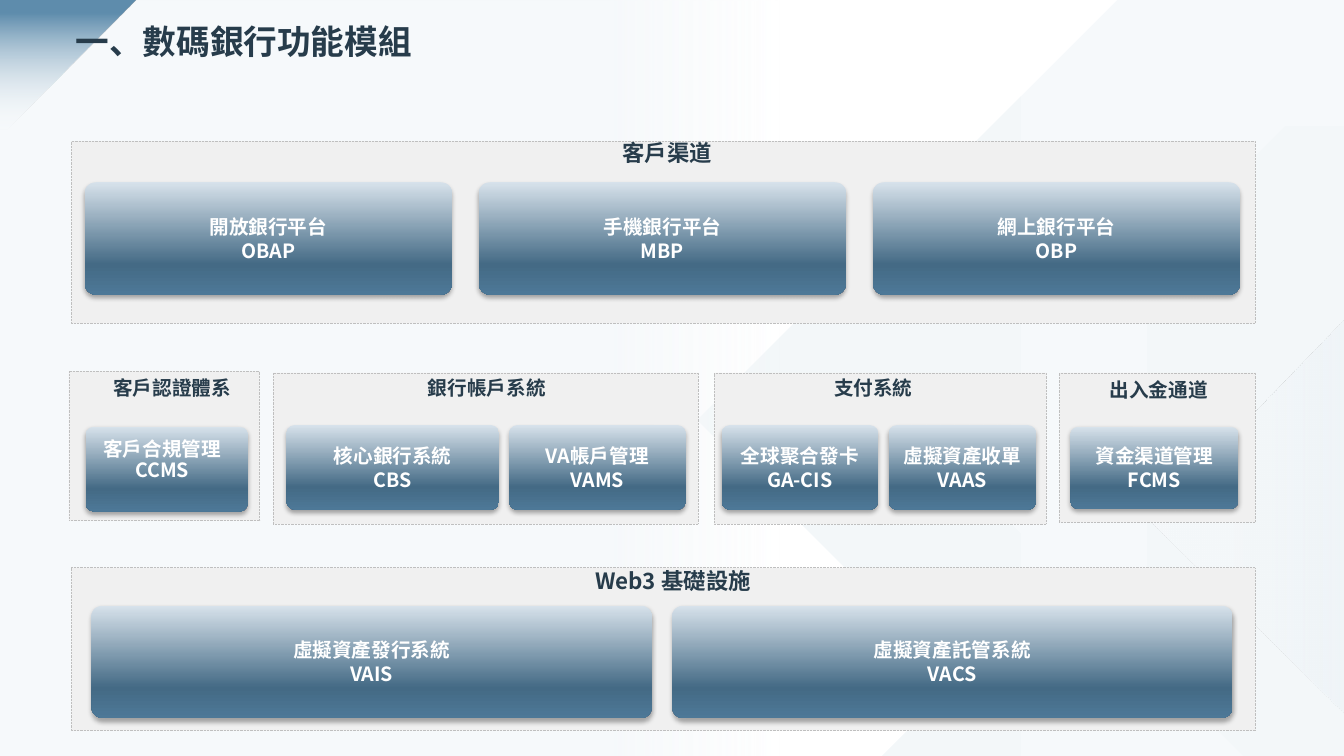
from lxml.etree import SubElement
from pptx import Presentation
from pptx.dml.color import RGBColor
from pptx.enum.dml import MSO_LINE
from pptx.enum.shapes import MSO_SHAPE as Kind
from pptx.enum.text import MSO_ANCHOR as Anchor, MSO_AUTO_SIZE as Fit, PP_ALIGN as Align
from pptx.oxml import parse_xml
from pptx.oxml.ns import nsdecls, qn
from pptx.util import Inches, Pt

FONT = "Noto Sans CJK SC"
WHITE = RGBColor(0xFF, 0xFF, 0xFF)
INK = RGBColor(0x27, 0x3C, 0x4B)
PANEL = RGBColor(0xF0, 0xF0, 0xF0)
EDGE = RGBColor(0xBF, 0xBF, 0xBF)
MIST = RGBColor(0xF6, 0xF9, 0xFB)
HAZE = RGBColor(0xF3, 0xF7, 0xF9)
FOG = RGBColor(0xEF, 0xF4, 0xF8)
BLUE = RGBColor(0x5F, 0x8D, 0xAD)
PALE = RGBColor(0xD7, 0xE2, 0xEB)
DEEP = RGBColor(0x44, 0x6A, 0x85)
STEEL = RGBColor(0x4D, 0x78, 0x97)

# Gradient stops: position %, colour, opacity %
VEIL = [(0, MIST, 100), (100, HAZE, 100)]
GLOW = [(0, MIST, 100), (57, HAZE, 100), (100, FOG, 70)]
FADE = [(45, MIST, 100), (58, MIST, 0)]
FLAG = [(10, BLUE, 100), (95, MIST, 0)]
TILE = [(0, PALE, 100), (73, DEEP, 100), (100, STEEL, 100)]

deck = Presentation()
deck.slide_width, deck.slide_height = Inches(13.33), Inches(7.5)
CELL = deck.slide_height / 90  # the slide is a grid of 160 columns by 90 rows
slide = deck.slides.add_slide(deck.slide_layouts[5])
shapes = slide.shapes


def draw(kind, at, fill, turn=0):
    """Add a preset shape, or a polygon when kind is None; fill is a colour or stops."""
    if kind is None:
        path = shapes.build_freeform(*at[0], scale=CELL)
        path.add_line_segments(at[1:])
        shape = path.convert_to_shape()
    else:
        shape = shapes.add_shape(kind, *[round(v * CELL) for v in at])
    shape.shadow.inherit = False
    shape.line.fill.background()
    if isinstance(fill, RGBColor):
        shape.fill.solid()
        shape.fill.fore_color.rgb = fill
        return shape
    shape.fill.background()
    stops = "".join(
        f'<a:gs pos="{pos * 1000}"><a:srgbClr val="{tint}">'
        f'<a:alpha val="{alpha * 1000}"/></a:srgbClr></a:gs>'
        for pos, tint, alpha in fill)
    grad = parse_xml(
        f'<a:gradFill {nsdecls("a")} rotWithShape="1"><a:gsLst>{stops}</a:gsLst>'
        f'<a:lin ang="{turn * 60000}" scaled="0"/></a:gradFill>')
    props = shape._element.spPr
    props.replace(props.find(qn("a:noFill")), grad)
    return shape


def write(shape, text, size=14, tint=WHITE, lead=1.0, align=Align.CENTER,
          anchor=Anchor.TOP, side=0):
    frame = shape.text_frame
    frame.word_wrap, frame.auto_size = True, Fit.NONE
    frame.vertical_anchor = anchor
    frame.margin_top = frame.margin_bottom = 0
    frame.margin_left = frame.margin_right = round(side * CELL)
    frame.text = text
    for para in frame.paragraphs:
        para.alignment, para.line_spacing = align, lead
        font = para.runs[0].font
        font.size, font.bold, font.name = Pt(size), True, FONT
        font.color.rgb = tint
        SubElement(font._element, qn("a:ea"), typeface=FONT)


# Backdrop
draw(None, [(132.6, 0), (160, 0), (160, 90), (104.9, 90), (113.8, 81.1), (82.7, 49.9)],
     VEIL, turn=180)
draw(None, [(153.2, 15.1), (160, 15.1), (160, 90), (148, 90), (113.2, 55.2)], VEIL)
draw(None, [(160, 38.5), (160, 85.3), (136.6, 61.9)], GLOW)
draw(Kind.RECTANGLE, (0, 0, 160, 90), FADE)
draw(Kind.RIGHT_TRIANGLE, (0, 0, 16.2, 16.2), FLAG).rotation = 90

# Title, lifted above the backdrop
title = shapes.title
title.left, title.top, title.width, title.height = [
    round(v * CELL) for v in (7.8, 3, 126.4, 6.1)]
write(title, "一、數碼銀行功能模組", size=24, tint=INK, lead=0.9, align=Align.LEFT, side=1.2)
title._element.getparent().append(title._element)

# Heading, size, leading, heading box, panel box, tile top and height, tiles (left, width, text)
panels = [
    ("客戶渠道", 16, 1.1, (63.6, 16.3, 31.6, 3.5), (8.5, 16.8, 140.9, 21.7), (21.7, 13.4),
     [(10.1, 43.7, "開放銀行平台\nOBAP"), (57, 43.7, "手機銀行平台\nMBP"),
      (103.9, 43.7, "網上銀行平台\nOBP")]),
    ("客戶認證體系", 14, 0.7, (11.2, 45.5, 18.6, 3.4), (8.2, 44.2, 22.7, 17.8), (50.8, 10.1),
     [(10.2, 19.3, "")]),
    ("銀行帳戶系統", 14, 0.7, (46, 45.5, 23.9, 3.8), (32.5, 44.4, 50.6, 18), (50.6, 10.1),
     [(34.1, 25.3, "核心銀行系統\nCBS"), (60.6, 21, "VA帳戶管理\nVAMS")]),
    ("支付系統", 14, 0.7, (92, 45.5, 23.9, 3.8), (85, 44.4, 39.5, 18), (50.6, 10.1),
     [(85.9, 18.6, "全球聚合發卡\nGA-CIS"), (105.8, 17.5, "虛擬資產收單\nVAAS")]),
    ("出入金通道", 14, 0.7, (128.6, 45.7, 18.6, 3.4), (126.1, 44.4, 23.3, 17.8), (50.8, 9.8),
     [(127.4, 20, "資金渠道管理\nFCMS")]),
    ("Web3 基礎設施", 16, 1.1, (57, 67.2, 46.2, 3.5), (8.5, 67.6, 140.9, 19.4), (72.1, 13.4),
     [(10.9, 66.7, "虛擬資產發行系統\nVAIS"), (80, 66.7, "虛擬資產託管系統\nVACS")]),
]
for head, size, lead, spot, area, (top, high), tiles in panels:
    panel = draw(Kind.RECTANGLE, area, PANEL)
    panel.line.color.rgb = EDGE
    panel.line.width, panel.line.dash_style = Pt(0.5), MSO_LINE.ROUND_DOT
    label = shapes.add_textbox(*[round(v * CELL) for v in spot])
    write(label, head, size=size, tint=INK, lead=lead)
    for left, wide, text in tiles:
        tile = draw(Kind.ROUNDED_RECTANGLE, (left, top, wide, high), TILE, turn=90)
        tile.adjustments[0] = 0.1
        glow = tile._element.spPr.find(qn("a:effectLst"))
        glow.append(parse_xml(
            f'<a:outerShdw {nsdecls("a")} blurRad="{Pt(3.5)}" dist="{Pt(2.2)}" dir="5400000" '
            'rotWithShape="0"><a:srgbClr val="000000"><a:alpha val="32000"/></a:srgbClr>'
            '</a:outerShdw>'))
        if text:
            write(tile, text, anchor=Anchor.MIDDLE)

# The compliance tile carries its text in a box of its own
note = shapes.add_textbox(*[round(v * CELL) for v in (9.5, 52.3, 19.6, 6.4)])
write(note, "客戶合規管理CCMS", lead=0.9)

deck.save("out.pptx")
